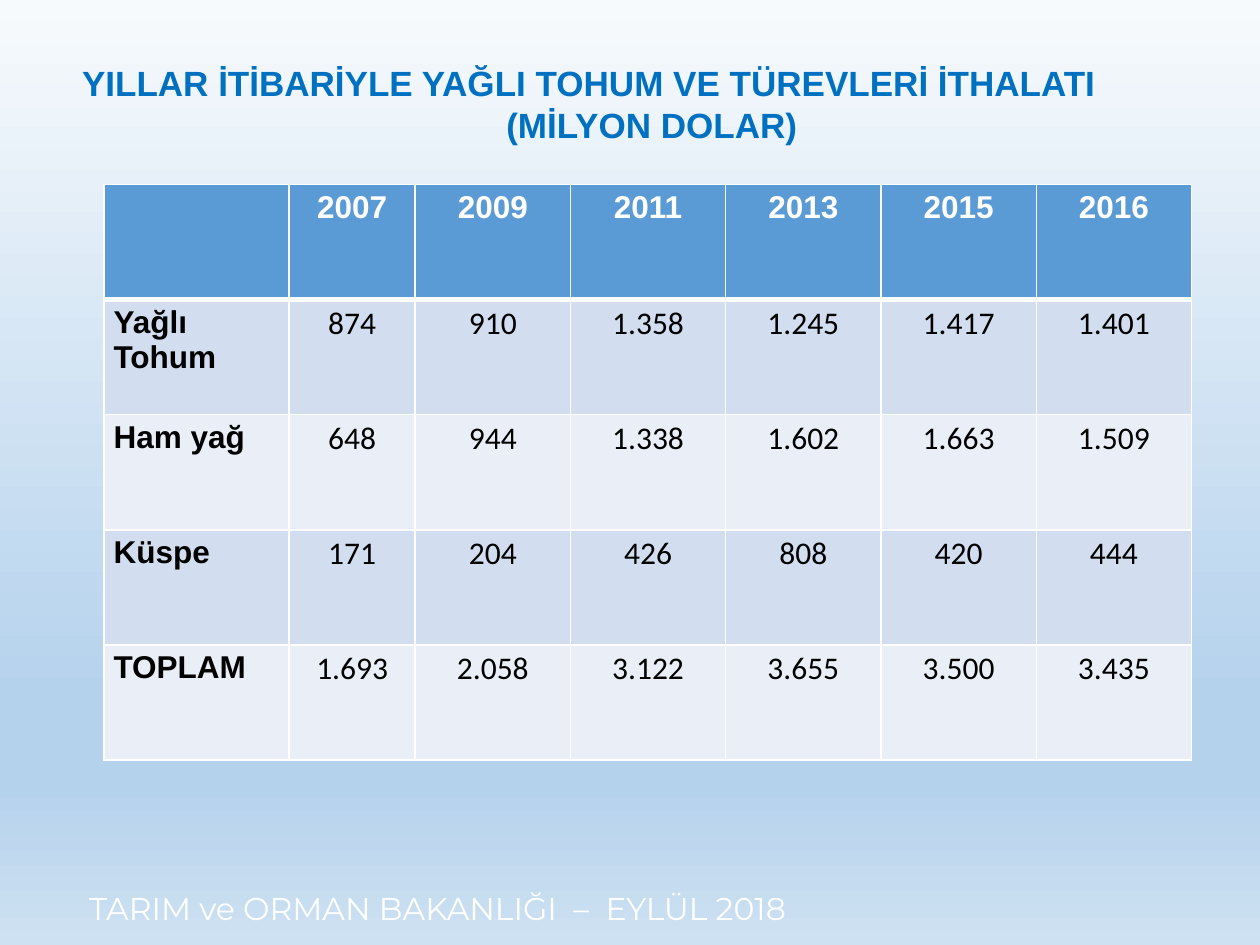
from dataclasses import dataclass

from lxml import etree
from pptx import Presentation
from pptx.dml.color import RGBColor
from pptx.enum.text import MSO_ANCHOR, MSO_AUTO_SIZE, PP_ALIGN
from pptx.oxml.ns import qn
from pptx.util import Cm, Pt

LEFT, CENTER = PP_ALIGN.LEFT, PP_ALIGN.CENTER
TOP = MSO_ANCHOR.TOP
NO_FIT = MSO_AUTO_SIZE.NONE

WHITE = RGBColor(0xFF, 0xFF, 0xFF)
BLACK = RGBColor(0x00, 0x00, 0x00)
TITLE_BLUE = RGBColor(0x00, 0x70, 0xC0)
HEADER_BLUE = RGBColor(0x5B, 0x9B, 0xD5)
BANDS = (RGBColor(0xD2, 0xDE, 0xEF), RGBColor(0xEA, 0xEF, 0xF7))
SKY_STOPS = (
    (0, RGBColor(0xF7, 0xFA, 0xFD)),
    (74, RGBColor(0xB5, 0xD2, 0xEC)),
    (83, RGBColor(0xB5, 0xD2, 0xEC)),
    (100, RGBColor(0xCE, 0xE1, 0xF2)),
)


@dataclass
class ImportRow:
    label: str
    values: tuple[str, ...]


YEARS = ImportRow("", ("2007", "2009", "2011", "2013", "2015", "2016"))
IMPORTS = (
    ImportRow("Yağlı Tohum", ("874", "910", "1.358", "1.245", "1.417", "1.401")),
    ImportRow("Ham yağ", ("648", "944", "1.338", "1.602", "1.663", "1.509")),
    ImportRow("Küspe", ("171", "204", "426", "808", "420", "444")),
    ImportRow("TOPLAM", ("1.693", "2.058", "3.122", "3.655", "3.500", "3.435")),
)
COL_WIDTHS = [Cm(3.73), Cm(2.54)] + [Cm(3.13)] * 5
ROW_HEIGHT = Cm(2.32)


def write(p, text: str, *, font: str = "Arial", size: int = 18, bold: bool = False,
          color: RGBColor = BLACK, align=LEFT, indent=Cm(0)) -> None:
    """Put formatted text in a paragraph."""
    pPr = p._p.get_or_add_pPr()
    pPr.set("marL", str(int(indent)))
    pPr.set("indent", "0")
    p.alignment = align
    p.space_before = Pt(0)
    p.font.size = Pt(size)
    if text:
        r = p.add_run()
        r.text = text
        f = r.font
        f.name, f.size, f.bold = font, Pt(size), bold
        f.color.rgb = color


def set_gradient(s) -> None:
    """Fill the background from top to bottom with the sky stops."""
    fill = s.background.fill
    fill.gradient()
    grad = s.background._cSld.find(".//" + qn("a:gradFill"))
    stops = grad.find(qn("a:gsLst"))
    for gs in list(stops):
        stops.remove(gs)
    for pos, color in SKY_STOPS:
        gs = etree.SubElement(stops, qn("a:gs"), pos=str(pos * 1000))
        etree.SubElement(gs, qn("a:srgbClr"), val=str(color))
    grad.find(qn("a:lin")).set("ang", str(90 * 60000))


def set_borders(cell, top: int, bottom: int) -> None:
    """Draw white cell borders; widths in points."""
    tcPr = cell._tc.get_or_add_tcPr()
    for side, width in (("L", 1), ("R", 1), ("T", top), ("B", bottom)):
        ln = etree.SubElement(tcPr, qn(f"a:ln{side}"), w=str(int(Pt(width))))
        fill = etree.SubElement(ln, qn("a:solidFill"))
        etree.SubElement(fill, qn("a:srgbClr"), val=str(WHITE))


def fill_row(table, i: int, row: ImportRow) -> None:
    """Write one table row; row 0 is the header."""
    header = i == 0
    for j, text in enumerate((row.label, *row.values)):
        cell = table.cell(i, j)
        set_borders(cell, top=3 if i == 1 else 1, bottom=3 if header else 1)
        cell.fill.solid()
        cell.fill.fore_color.rgb = HEADER_BLUE if header else BANDS[(i - 1) % 2]
        cell.margin_left = cell.margin_right = Cm(0.19)
        cell.margin_top = cell.margin_bottom = Cm(0.1)
        cell.vertical_anchor = TOP
        strong = header or j == 0
        write(cell.text_frame.paragraphs[0], text,
              font="Arial" if strong else "Calibri", bold=strong,
              color=WHITE if header else BLACK, align=CENTER if j else LEFT)


def main() -> None:
    prs = Presentation()
    prs.slide_width, prs.slide_height = Cm(25.4), Cm(19.05)
    s = prs.slides.add_slide(prs.slide_layouts[5])
    set_gradient(s)

    # Title
    title = s.shapes.title
    title.left, title.top, title.width, title.height = Cm(1.3), Cm(1.12), Cm(21.9), Cm(1.96)
    tf = title.text_frame
    tf.word_wrap, tf.auto_size, tf.vertical_anchor = True, NO_FIT, TOP
    style = {"size": 20, "bold": True, "color": TITLE_BLUE}
    write(tf.paragraphs[0], "YILLAR İTİBARİYLE YAĞLI TOHUM VE TÜREVLERİ İTHALATI",
          indent=Cm(0.1), **style)
    write(tf.add_paragraph(), "(MİLYON DOLAR)", align=CENTER, indent=Cm(1.78), **style)

    # Import table
    rows = (YEARS, *IMPORTS)
    table = s.shapes.add_table(len(rows), len(COL_WIDTHS), Cm(2.1), Cm(3.72),
                               sum(COL_WIDTHS), ROW_HEIGHT * len(rows)).table
    for column, width in zip(table.columns, COL_WIDTHS):
        column.width = width
    for i, row in enumerate(rows):
        table.rows[i].height = ROW_HEIGHT
        fill_row(table, i, row)

    # Footer
    tf = s.shapes.add_textbox(Cm(1.55), Cm(17.8), Cm(23.85), Cm(1.03)).text_frame
    tf.word_wrap = True
    write(tf.paragraphs[0], "TARIM ve ORMAN BAKANLIĞI  –  EYLÜL 2018",
          font="Montserrat", color=WHITE)

    prs.save("out.pptx")


if __name__ == "__main__":
    main()
